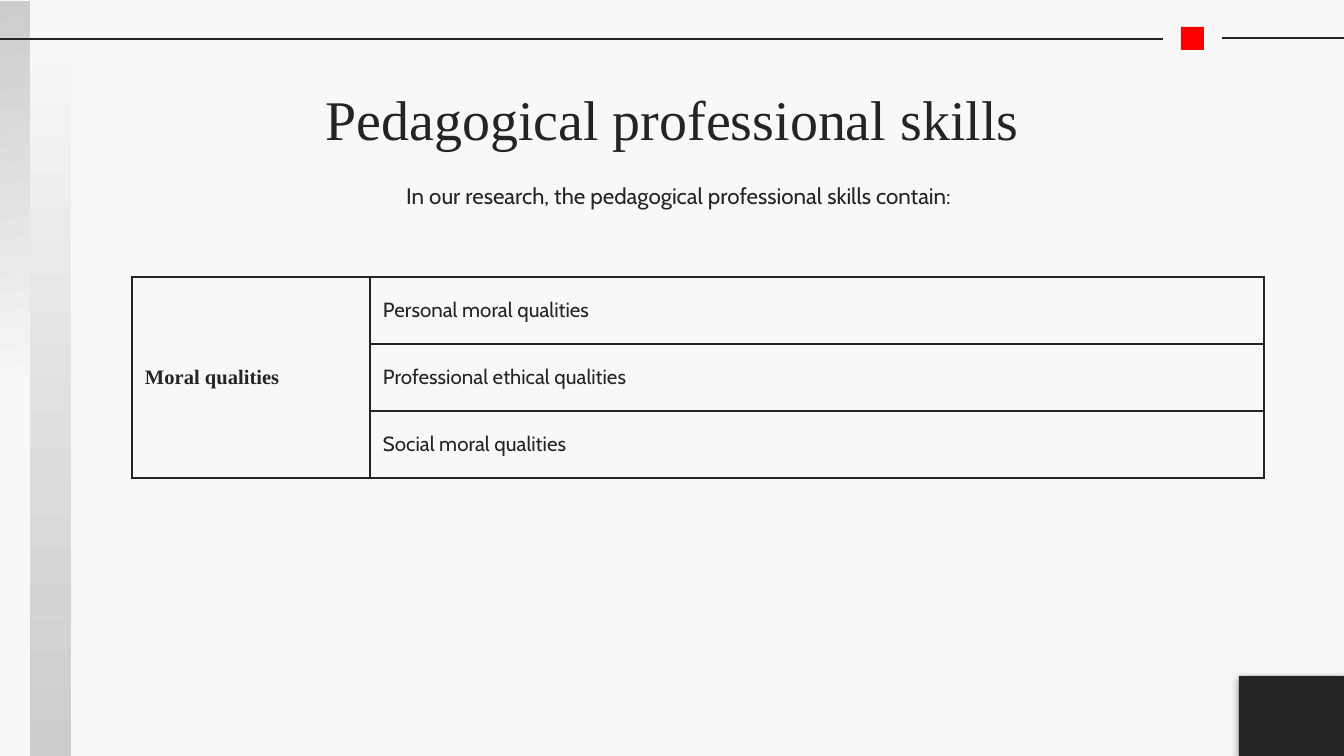
from typing import NamedTuple

from lxml.etree import SubElement
from pptx import Presentation
from pptx.dml.color import RGBColor
from pptx.enum.shapes import MSO_CONNECTOR, MSO_SHAPE
from pptx.enum.text import MSO_ANCHOR, MSO_AUTO_SIZE, PP_ALIGN
from pptx.oxml.ns import qn
from pptx.util import Emu, Pt

COLORS = {"paper": "F8F8F8", "grey": "CCCCCC", "ink": "242424", "accent": "FF0000"}
SERIF, SANS = "Times New Roman", "Cabin"
SLIDE_W, SLIDE_H = 1344, 756
EMU_PER_PX = 9144000 / SLIDE_W


class Box(NamedTuple):
    left: int
    top: int
    width: int
    height: int


class Strip(NamedTuple):
    box: Box
    stops: tuple[tuple[int, str], ...]  # percent, colour
    angle: int  # degrees, clockwise


class Rule(NamedTuple):
    start: int
    end: int
    y: int


STRIPS = [
    Strip(Box(30, 1, 41, 755), ((0, "paper"), (100, "grey")), 90),
    Strip(Box(0, 1, 30, 755), ((0, "paper"), (47, "paper"), (100, "grey")), 260),
]
RULES = [Rule(-16, 1163, 39), Rule(1222, 1345, 38)]
TITLE_BOX = Box(106, 66, 1133, 85)
INTRO_BOX = Box(106, 169, 1133, 54)
TABLE_LEFT, TABLE_TOP, ROW_HEIGHT = 132, 277, 67
COLUMN_WIDTHS = (238, 894)
GROUP = "Moral qualities"
QUALITIES = [
    "Personal moral qualities",
    "Professional ethical qualities",
    "Social moral qualities",
]


def px(value: float) -> Emu:
    return Emu(round(value * EMU_PER_PX))


def rgb(name: str) -> RGBColor:
    return RGBColor.from_string(COLORS[name])


def add_color(parent, name: str):
    return SubElement(parent, qn("a:srgbClr"), val=COLORS[name])


def add_block(slide, box: Box, color: str):
    block = slide.shapes.add_shape(MSO_SHAPE.RECTANGLE, *map(px, box))
    block.shadow.inherit = False
    block.fill.solid()
    block.fill.fore_color.rgb = rgb(color)
    block.line.fill.background()
    return block


def add_strip(slide, strip: Strip) -> None:
    block = add_block(slide, strip.box, "paper")
    solid = block.fill._xPr.find(qn("a:solidFill"))
    gradient = SubElement(block.fill._xPr, qn("a:gradFill"), rotWithShape="1")
    stop_list = SubElement(gradient, qn("a:gsLst"))
    for percent, color in strip.stops:
        add_color(SubElement(stop_list, qn("a:gs"), pos=str(percent * 1000)), color)
    SubElement(gradient, qn("a:lin"), ang=str(strip.angle * 60000), scaled="0")
    block.fill._xPr.replace(solid, gradient)


def add_rule(slide, rule: Rule) -> None:
    connector = slide.shapes.add_connector(
        MSO_CONNECTOR.STRAIGHT, px(rule.start), px(rule.y), px(rule.end), px(rule.y)
    )
    connector.line.color.rgb = rgb("ink")
    connector.line.width = Pt(0.75)
    SubElement(connector._element.spPr, qn("a:effectLst"))


def add_soft_shadow(block) -> None:
    effects = block._element.spPr.find(qn("a:effectLst"))
    shadow = SubElement(effects, qn("a:outerShdw"), blurRad=str(Pt(4.5)),
                        dist=str(Pt(1.5)), dir="5400000", algn="bl", rotWithShape="0")
    SubElement(add_color(shadow, "ink"), qn("a:alpha"), val="50000")


def format_paragraph(paragraph, font: str, size: int, align: PP_ALIGN,
                     bold: bool = False) -> None:
    paragraph.alignment = align
    for run in paragraph.runs:
        run.font.name = font
        run.font.size = Pt(size)
        run.font.bold = bold
        run.font.color.rgb = rgb("ink")


def fill_heading(holder, box: Box, text: str, font: str, size: int,
                 inset_top: int, inset_right: int) -> None:
    holder.left, holder.top, holder.width, holder.height = map(px, box)
    frame = holder.text_frame
    frame.word_wrap = True
    frame.auto_size = MSO_AUTO_SIZE.NONE
    frame.vertical_anchor = MSO_ANCHOR.TOP
    frame.margin_left, frame.margin_bottom = px(13), px(13)
    frame.margin_top, frame.margin_right = px(inset_top), px(inset_right)
    frame.text = text
    format_paragraph(frame.paragraphs[0], font, size, PP_ALIGN.CENTER)


def style_cell(cell) -> None:
    cell.vertical_anchor = MSO_ANCHOR.MIDDLE
    cell.margin_left = cell.margin_right = px(13)
    cell.margin_top = cell.margin_bottom = 0
    properties = cell._tc.get_or_add_tcPr()
    for side in ("a:lnL", "a:lnR", "a:lnT", "a:lnB"):
        border = SubElement(properties, qn(side), w=str(Pt(0.75)))
        add_color(SubElement(border, qn("a:solidFill")), "ink")
    cell.fill.background()


def add_qualities_table(slide) -> None:
    table = slide.shapes.add_table(
        len(QUALITIES), len(COLUMN_WIDTHS), px(TABLE_LEFT), px(TABLE_TOP),
        px(sum(COLUMN_WIDTHS)), px(ROW_HEIGHT * len(QUALITIES)),
    ).table
    table.first_row = table.horz_banding = False
    for column, width in zip(table.columns, COLUMN_WIDTHS):
        column.width = px(width)
    for row in table.rows:
        row.height = px(ROW_HEIGHT)
        for cell in row.cells:
            style_cell(cell)

    group_cell = table.cell(0, 0)
    group_cell.merge(table.cell(len(QUALITIES) - 1, 0))
    group_cell.text_frame.text = GROUP
    format_paragraph(group_cell.text_frame.paragraphs[0], SERIF, 11, PP_ALIGN.LEFT, True)
    for index, quality in enumerate(QUALITIES):
        frame = table.cell(index, 1).text_frame
        frame.text = quality
        format_paragraph(frame.paragraphs[0], SANS, 11, PP_ALIGN.LEFT)
        frame.paragraphs[0].space_after = Pt(16)


def main() -> None:
    deck = Presentation()
    deck.slide_width, deck.slide_height = px(SLIDE_W), px(SLIDE_H)
    slide = deck.slides.add_slide(deck.slide_layouts[5])
    slide.background.fill.solid()
    slide.background.fill.fore_color.rgb = rgb("paper")

    # Shaded strips, header rules and corner block
    for strip in STRIPS:
        add_strip(slide, strip)
    for rule in RULES:
        add_rule(slide, rule)
    add_block(slide, Box(1181, 27, 23, 23), "accent")
    corner = add_block(slide, Box(1239, 676, 107, 80), "ink")
    add_soft_shadow(corner)

    # Title and introduction
    fill_heading(slide.shapes.title, TITLE_BOX, "Pedagogical professional skills",
                 SERIF, 30, inset_top=19, inset_right=13)
    intro = slide.shapes.add_textbox(*map(px, INTRO_BOX))
    fill_heading(intro, INTRO_BOX,
                 "In our research, the pedagogical professional skills contain:",
                 SANS, 12, inset_top=13, inset_right=0)

    # Table of qualities
    add_qualities_table(slide)
    deck.save("out.pptx")


if __name__ == "__main__":
    main()
